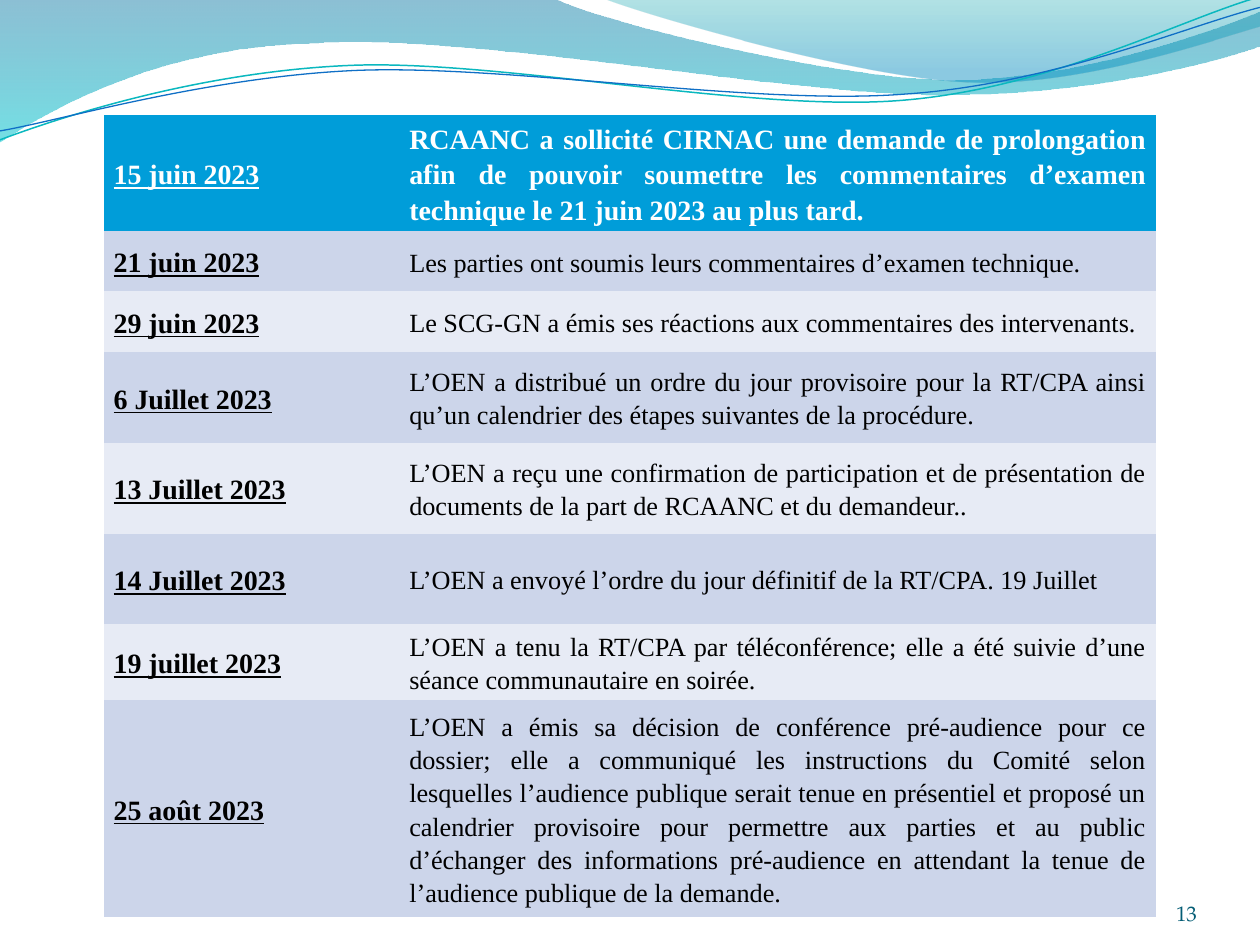
from dataclasses import dataclass

from lxml import etree
from pptx import Presentation
from pptx import util as u
from pptx.dml.color import RGBColor
from pptx.enum import text
from pptx.oxml import ns


@dataclass(frozen=True)
class Theme:
    table_font: str = "Times New Roman"
    number_font: str = "TeX Gyre Pagella"
    heading_size: int = 16
    body_size: int = 15
    number_size: int = 12
    header_fill: str = "009DD9"
    header_text: str = "FFFFFF"
    body_text: str = "000000"
    bands: tuple = ("CCD5EA", "E7EBF5")
    number: str = "045D75"
    # Gradient stops: position, colour, opacity in percent
    wide_wave: tuple = ((0, "0074A1", 45), (1, "00C6CF", 55))
    right_wave: tuple = ((0, "00A1A9", 30), (0.8, "008BBF", 45))
    teal_line: str = "0AB8BF"
    blue_line: str = "0F6FC6"


theme = Theme()
NO_STYLE_NO_GRID = "{2D5ABB26-0587-4C30-8999-92F81FD0307C}"


def add_outline(slide, start, pieces, close):
    """Draw pieces in cm: one point is a straight line, three are a Bézier curve."""
    lengths = [(u.Cm(x), u.Cm(y)) for piece in pieces for x, y in piece]
    builder = slide.shapes.build_freeform(u.Cm(start[0]), u.Cm(start[1]))
    builder.add_line_segments(lengths, close=close)
    outline = builder.convert_to_shape()
    outline.shadow.inherit = False
    segments = iter(outline.element.xpath(".//a:lnTo"))
    for piece in pieces:
        group = [next(segments) for _ in piece]
        if len(group) == 3:
            curve = etree.Element(ns.qn("a:cubicBezTo"))
            group[0].addprevious(curve)
            for segment in group:
                curve.append(segment[0])
                segment.getparent().remove(segment)
    return outline


def format_paragraph(para, font_name, size, color, bold=False, underline=False):
    para.font.name = font_name
    para.font.size = u.Pt(size)
    para.font.bold = bold
    para.font.underline = underline
    para.font.color.rgb = RGBColor.from_string(color)


deck = Presentation()
deck.slide_width, deck.slide_height = u.Cm(25.4), u.Cm(19.05)
page = deck.slides.add_slide(deck.slide_layouts[6])

# Shaded waves across the top
waves = [
    ((0, 0), [
        [(11.18, -0.03)],
        [(12.09, 0.43), (16.87, 1.6), (19.25, 1.6)],
        [(21.67, 1.6), (24.33, 0.66), (25.4, 0.23)],
        [(25.43, 0.91)],
        [(24.97, 1.12), (22.1, 1.93), (18.95, 1.91)],
        [(15.8, 1.91), (9.7, 0.71), (6.53, 0.86)],
        [(3.28, 0.91), (1.17, 2.11), (-0.03, 2.87)],
    ], theme.wide_wave),
    ((12.17, -0.03), [
        [(12.93, 0.28), (17.32, 1.57), (19.53, 1.65)],
        [(21.74, 1.75), (24.41, 0.81), (25.4, 0.53)],
        [(25.4, 0)],
    ], theme.right_wave),
]
for start, pieces, stops in waves:
    wave = add_outline(page, start, pieces, close=True)
    wave.line.fill.background()
    wave.fill.gradient()
    wave.fill.gradient_angle = 270
    for stop, (position, color, _) in zip(wave.fill.gradient_stops, stops):
        stop.position = position
        stop.color.rgb = RGBColor.from_string(color)
    for node, (_, _, opacity) in zip(wave.element.xpath(".//a:gs/a:srgbClr"), stops):
        etree.SubElement(node, ns.qn("a:alpha"), val=str(opacity * 1000))

# Thin lines following the waves
wave_lines = [
    ((0, 2.82), [
        [(1.22, 2.36), (4.01, 1.45), (7.04, 1.32)],
        [(10.03, 1.19), (15.06, 2.26), (18.11, 2.03)],
        [(21.16, 1.8), (23.83, 0.38), (25.35, -0.05)],
    ], theme.teal_line, 0.85),
    ((0, 2.64), [
        [(1.19, 2.44), (4.17, 1.55), (7.19, 1.42)],
        [(10.24, 1.3), (15.16, 2.13), (18.21, 1.9)],
        [(21.23, 1.7), (23.9, 0.53), (25.4, 0.15)],
    ], theme.blue_line, 0.75),
]
for start, pieces, color, width in wave_lines:
    wave_line = add_outline(page, start, pieces, close=False)
    wave_line.fill.background()
    wave_line.line.color.rgb = RGBColor.from_string(color)
    wave_line.line.width = u.Pt(width)

# Page number
number_box = page.shapes.add_textbox(u.Cm(22.02), u.Cm(17.65), u.Cm(2.11), u.Cm(1.02))
frame = number_box.text_frame
frame.word_wrap = True
frame.vertical_anchor = text.MSO_ANCHOR.BOTTOM
frame.margin_left = frame.margin_right = frame.margin_top = frame.margin_bottom = 0
number_para = frame.paragraphs[0]
number_para.text = "13"
number_para.alignment = text.PP_ALIGN.RIGHT
format_paragraph(number_para, theme.number_font, theme.number_size, theme.number)

# Timeline table: row height in cm, date, event
events = [
    (1.83, "15 juin 2023", "RCAANC a sollicité CIRNAC une demande de prolongation afin de "
     "pouvoir soumettre les commentaires d’examen technique le 21 juin 2023 au plus tard."),
    (1.22, "21 juin 2023", "Les parties ont soumis leurs commentaires d’examen technique."),
    (1.22, "29 juin 2023",
     "Le SCG-GN a émis ses réactions aux commentaires des intervenants."),
    (1.83, "6 Juillet 2023", "L’OEN a distribué un ordre du jour provisoire pour la RT/CPA "
     "ainsi qu’un calendrier des étapes suivantes de la procédure."),
    (1.83, "13 Juillet 2023", "L’OEN a reçu une confirmation de participation et de "
     "présentation de documents de la part de RCAANC et du demandeur.."),
    (1.83, "14 Juillet 2023",
     "L’OEN a envoyé l’ordre du jour définitif de la RT/CPA. 19 Juillet"),
    (1.52, "19 juillet 2023", "L’OEN a tenu la RT/CPA par téléconférence; elle a été suivie "
     "d’une séance communautaire en soirée."),
    (3.91, "25 août 2023", "L’OEN a émis sa décision de conférence pré-audience pour ce "
     "dossier; elle a communiqué les instructions du Comité selon lesquelles l’audience "
     "publique serait tenue en présentiel et proposé un calendrier provisoire pour permettre "
     "aux parties et au public d’échanger des informations pré-audience en attendant la tenue "
     "de l’audience publique de la demande."),
]
column_widths = (5.96, 15.24)
table_frame = page.shapes.add_table(
    len(events), len(column_widths), u.Cm(2.1), u.Cm(2.32),
    u.Cm(sum(column_widths)), u.Cm(sum(event[0] for event in events)))
table_frame.element.xpath(".//a:tableStyleId")[0].text = NO_STYLE_NO_GRID
table = table_frame.table
for column, width in zip(table.columns, column_widths):
    column.width = u.Cm(width)

for row_index, (height, *entries) in enumerate(events):
    is_header = row_index == 0
    table.rows[row_index].height = u.Cm(height)
    fill = theme.header_fill if is_header else theme.bands[(row_index - 1) % 2]
    color = theme.header_text if is_header else theme.body_text
    for column_index, entry in enumerate(entries):
        is_date = column_index == 0
        strong = is_header or is_date
        cell = table.cell(row_index, column_index)
        cell.fill.solid()
        cell.fill.fore_color.rgb = RGBColor.from_string(fill)
        cell.vertical_anchor = text.MSO_ANCHOR.MIDDLE
        cell.margin_left = cell.margin_right = u.Cm(0.19)
        cell.margin_top = cell.margin_bottom = 0
        para = cell.text_frame.paragraphs[0]
        para.text = entry
        para.alignment = text.PP_ALIGN.LEFT if is_date else text.PP_ALIGN.JUSTIFY
        para.line_spacing = 1.15
        para.space_after = u.Pt(0)
        format_paragraph(para, theme.table_font,
                         theme.heading_size if strong else theme.body_size,
                         color, bold=strong, underline=is_date)

deck.save("out.pptx")
